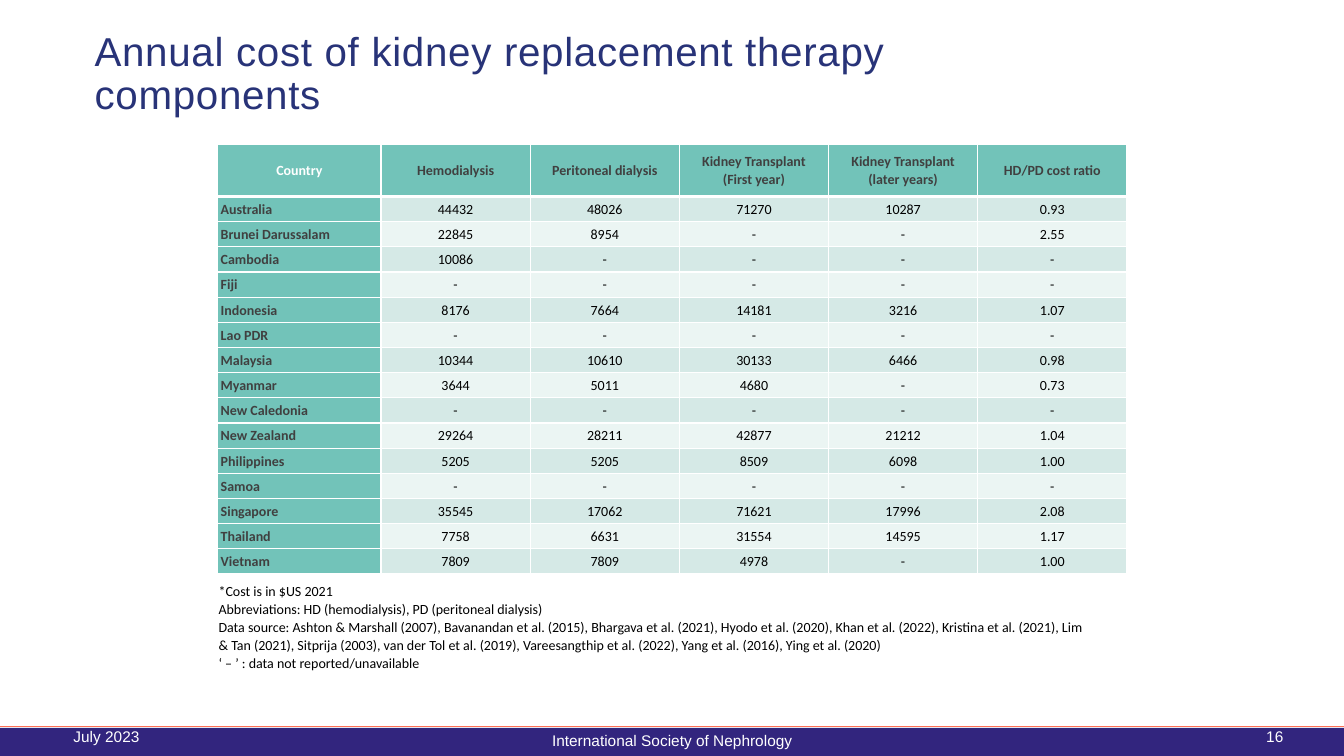
from lxml import etree
from pptx import Presentation
from pptx import util as u
from pptx.dml.color import RGBColor
from pptx.enum import shapes, text
from pptx.oxml.ns import qn

WHITE = RGBColor(0xFF, 0xFF, 0xFF)
BLACK = RGBColor(0, 0, 0)
GREY = RGBColor(0x40, 0x40, 0x40)
NAVY = RGBColor(0x28, 0x33, 0x78)
PURPLE = RGBColor(0x32, 0x25, 0x7E)
CORAL = RGBColor(0xFE, 0x70, 0x55)
TEAL = RGBColor(0x72, 0xC3, 0xB9)
BANDS = RGBColor(0xEB, 0xF5, 0xF3), RGBColor(0xD5, 0xE9, 0xE6)

W, H = u.Inches(13.33), u.Inches(7.5)
LEFT, CENTER, RIGHT = text.PP_ALIGN.LEFT, text.PP_ALIGN.CENTER, text.PP_ALIGN.RIGHT
MIDDLE, TOP = text.MSO_ANCHOR.MIDDLE, text.MSO_ANCHOR.TOP

HEADER = ["Country", "Hemodialysis", "Peritoneal dialysis",
          "Kidney Transplant\n(First year)", "Kidney Transplant\n(later years)",
          "HD/PD cost ratio"]
COSTS = [
    ("Australia", "44432", "48026", "71270", "10287", "0.93"),
    ("Brunei Darussalam", "22845", "8954", "-", "-", "2.55"),
    ("Cambodia", "10086", "-", "-", "-", "-"),
    ("Fiji", "-", "-", "-", "-", "-"),
    ("Indonesia", "8176", "7664", "14181", "3216", "1.07"),
    ("Lao PDR", "-", "-", "-", "-", "-"),
    ("Malaysia", "10344", "10610", "30133", "6466", "0.98"),
    ("Myanmar", "3644", "5011", "4680", "-", "0.73"),
    ("New Caledonia", "-", "-", "-", "-", "-"),
    ("New Zealand", "29264", "28211", "42877", "21212", "1.04"),
    ("Philippines", "5205", "5205", "8509", "6098", "1.00"),
    ("Samoa", "-", "-", "-", "-", "-"),
    ("Singapore", "35545", "17062", "71621", "17996", "2.08"),
    ("Thailand", "7758", "6631", "31554", "14595", "1.17"),
    ("Vietnam", "7809", "7809", "4978", "-", "1.00"),
]
NOTES = """*Cost is in $US 2021
Abbreviations: HD (hemodialysis), PD (peritoneal dialysis)
Data source: Ashton & Marshall (2007), Bavanandan et al. (2015), Bhargava et al. (2021), Hyodo et al. (2020), Khan et al. (2022), Kristina et al. (2021), Lim & Tan (2021), Sitprija (2003), van der Tol et al. (2019), Vareesangthip et al. (2022), Yang et al. (2016), Ying et al. (2020)
‘ – ’ : data not reported/unavailable"""


def across(percent):
    return u.Emu(round(W * percent / 100))


def down(percent):
    return u.Emu(round(H * percent / 100))


def area(x, y, w, h):
    """Turn percentages of the slide into left, top, width, height."""
    return across(x), down(y), across(w), down(h)


def write(tf, words, size, color, font="Arial", align=LEFT, bold=False,
          spacing=1.0, tracking=None):
    tf.text = words
    for p in tf.paragraphs:
        p.alignment, p.line_spacing = align, spacing
        for r in p.runs:
            r.font.name, r.font.size, r.font.bold = font, u.Pt(size), bold
            r.font.color.rgb = color
            if tracking:
                r.font._element.set("spc", str(tracking))


def add_text(slide, place, words, size, color, anchor=MIDDLE, **style):
    tf = slide.shapes.add_textbox(*area(*place)).text_frame
    tf.word_wrap, tf.vertical_anchor = True, anchor
    write(tf, words, size, color, **style)


def set_borders(cell, widths):
    """Draw white left, right, top and bottom borders of the given points."""
    tcPr = cell._tc.get_or_add_tcPr()
    for side, width in zip("LRTB", widths):
        ln = etree.SubElement(tcPr, qn("a:ln" + side), w=str(u.Pt(width)))
        fill = etree.SubElement(ln, qn("a:solidFill"))
        etree.SubElement(fill, qn("a:srgbClr"), val=str(WHITE))


def fill_cell(cell, words, row, col):
    heading = row == 0 or col == 0
    side = 0.03 if heading else 0.01
    cell.margin_left = cell.margin_right = u.Inches(side)
    cell.margin_top = u.Inches(0 if heading else 0.01)
    cell.margin_bottom = 0
    cell.vertical_anchor = MIDDLE
    set_borders(cell, (1, 1, 3 if row == 1 else 1, 3 if row == 0 else 1))
    cell.fill.solid()
    cell.fill.fore_color.rgb = TEAL if heading else BANDS[row % 2]
    color = WHITE if row == col == 0 else GREY if heading else BLACK
    write(cell.text_frame, words, 10, color, font="Calibri", bold=heading,
          align=LEFT if row and col == 0 else CENTER,
          spacing=1.07 if heading else 1.0)


def add_cost_table(slide):
    rows = [HEADER] + COSTS
    table = slide.shapes.add_table(len(rows), len(HEADER),
                                   *area(16.2, 19.07, 67.65, 56.93)).table
    for i, column in enumerate(table.columns):
        column.width = across(11.1 if i else 12.15)
    for i, row in enumerate(table.rows):
        row.height = down(3.33 if i else 6.93)
        for j, words in enumerate(rows[i]):
            fill_cell(table.cell(i, j), words, i, j)


def add_footer(slide):
    # Bar
    bar = slide.shapes.add_shape(shapes.MSO_SHAPE.RECTANGLE, *area(0, 96.27, 100, 3.73))
    bar.shadow.inherit = False
    bar.fill.solid()
    bar.fill.fore_color.rgb = PURPLE
    bar.line.fill.background()
    # Rule above the bar
    rule = slide.shapes.add_connector(shapes.MSO_CONNECTOR.STRAIGHT,
                                      0, down(96.13), W, down(96.13))
    rule.line.color.rgb, rule.line.width = CORAL, u.Pt(0.75)
    etree.SubElement(rule._element.spPr, qn("a:effectLst"))
    # Date, society and slide number
    for place, words, align in [
        ((4.73, 94.8, 22.5, 5.33), "July 2023", LEFT),
        ((33.15, 95.33, 33.75, 5.33), "International Society of Nephrology", CENTER),
        ((68.48, 94.8, 27.75, 5.33), "16", RIGHT),
    ]:
        add_text(slide, place, words, 11, WHITE, align=align)


def main():
    prs = Presentation()
    prs.slide_width, prs.slide_height = W, H
    slide = prs.slides.add_slide(prs.slide_layouts[6])
    add_footer(slide)
    add_text(slide, (6.3, 5.2, 69.45, 9.47),
             "Annual cost of kidney replacement therapy components",
             28.8, NAVY, spacing=0.9, tracking=50)
    add_cost_table(slide)
    add_text(slide, (15.53, 76.27, 66.3, 13.2), NOTES, 10, BLACK,
             anchor=TOP, font="Calibri", spacing=1.07)
    prs.save("out.pptx")


if __name__ == "__main__":
    main()
